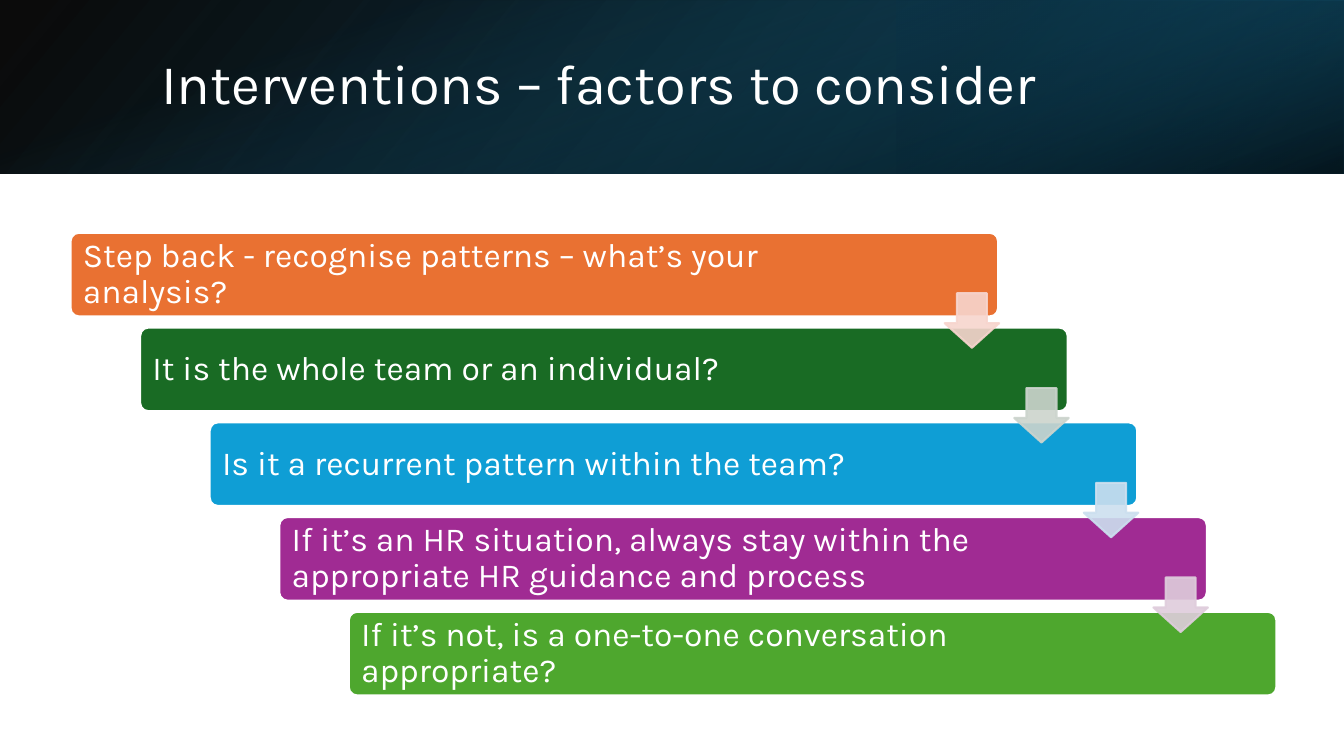
from lxml import etree
from pptx import Presentation
from pptx.dml.color import RGBColor
from pptx.enum.shapes import MSO_SHAPE as Preset
from pptx.enum.text import MSO_ANCHOR as Anchor, PP_ALIGN as Align
from pptx.oxml import parse_xml
from pptx.oxml.ns import nsdecls, qn
from pptx.util import Inches, Pt

# Content
TITLE = "Interventions – factors to consider"
FACTORS = [
    ("Step back - recognise patterns – what’s your analysis?", "orange"),
    ("It is the whole team or an individual?", "green"),
    ("Is it a recurrent pattern within the team?", "blue"),
    ("If it’s an HR situation, always stay within the appropriate HR guidance and process", "purple"),
    ("If it’s not, is a one-to-one conversation appropriate?", "lime"),
]
ARROW_TINTS = ["pale orange", "pale green", "pale blue", "pale purple"]
COLORS = {
    "white": "FFFFFF", "black": "000000",
    "navy": "104862", "deep teal": "0B3041", "teal": "156082",
    "orange": "E97132", "green": "196B24", "blue": "0F9ED5",
    "purple": "A02B93", "lime": "4EA72E",
    "pale orange": "F7D5CE", "pale green": "CCD4CD",
    "pale blue": "CCDFEF", "pale purple": "DFCDDC",
}
FONT = "Karla"

# Header layers: box, rotation, flipped, angle, stops (position, color, opacity)
HEADER_LAYERS = [
    ((0, 0, 13.33, 1.72), 0, True, 140, [(0, "black", 96), (100, "navy", 100)]),
    ((8.89, 0, 4.44, 1.72), 180, True, 320, [(19, "deep teal", 68), (100, "teal", 79)]),
    ((5.8, -5.8, 1.72, 13.33), 90, False, 340, [(23, "teal", 0), (99, "black", 74)]),
]

# Staircase geometry, in inches
BAR_LEFT, BAR_TOP, BAR_WIDTH, BAR_HEIGHT = 0.7, 2.31, 9.2, 0.83
STEP_X, STEP_Y = 0.69, 0.94
ARROW_LEFT, ARROW_TOP, ARROW_SIZE = 9.37, 2.91, 0.54


def color(name):
    return RGBColor.from_string(COLORS[name])


def set_text(frame, text, size=24, name="white", margins=(0.1, 0.05, 0.1, 0.05)):
    frame.word_wrap = True
    frame.vertical_anchor = Anchor.MIDDLE
    (frame.margin_left, frame.margin_top,
     frame.margin_right, frame.margin_bottom) = map(Inches, margins)
    para = frame.paragraphs[0]
    para.alignment = Align.LEFT
    para.line_spacing = 0.9
    span = para.add_run()
    span.text = text
    span.font.name = FONT
    span.font.size = Pt(size)
    span.font.color.rgb = color(name)


def add_box(page, preset, box, fill=None, line=None, adjustments=()):
    shape = page.shapes.add_shape(preset, *map(Inches, box))
    shape.shadow.inherit = False
    for index, value in enumerate(adjustments):
        shape.adjustments[index] = value
    if fill:
        shape.fill.solid()
        shape.fill.fore_color.rgb = color(fill)
    if line:
        shape.line.color.rgb = color(line)
        shape.line.width = Pt(1.5)
    else:
        shape.line.fill.background()
    return shape


def set_gradient(shape, angle, stops):
    stop_xml = "".join(
        f'<a:gs pos="{position * 1000}"><a:srgbClr val="{COLORS[name]}">'
        f'<a:alpha val="{opacity * 1000}"/></a:srgbClr></a:gs>'
        for position, name, opacity in stops)
    gradient = parse_xml(
        f'<a:gradFill {nsdecls("a")} rotWithShape="1"><a:gsLst>{stop_xml}</a:gsLst>'
        f'<a:lin ang="{angle * 60000}" scaled="0"/></a:gradFill>')
    shape._element.spPr.find(qn("a:prstGeom")).addnext(gradient)


def set_opacity(shape, percent):
    for swatch in shape._element.spPr.iter(qn("a:srgbClr")):
        etree.SubElement(swatch, qn("a:alpha")).set("val", str(percent * 1000))


def main():
    deck = Presentation()
    deck.slide_width, deck.slide_height = Inches(13.33), Inches(7.5)
    page = deck.slides.add_slide(deck.slide_layouts[5])
    title = page.shapes.title

    # Header band
    for box, rotation, flipped, angle, stops in HEADER_LAYERS:
        layer = add_box(page, Preset.RECTANGLE, box)
        layer.rotation = rotation
        if flipped:
            layer._element.spPr.find(qn("a:xfrm")).set("flipH", "1")
        set_gradient(layer, angle, stops)

    # Title, raised above the band
    title.left, title.top, title.width, title.height = map(Inches, (1.5, 0.38, 10.98, 0.96))
    set_text(title.text_frame, TITLE, size=40)
    page.shapes._spTree.append(title._element)

    # Staircase of bars
    for step, (text, fill) in enumerate(FACTORS):
        box = (BAR_LEFT + step * STEP_X, BAR_TOP + step * STEP_Y, BAR_WIDTH, BAR_HEIGHT)
        bar = add_box(page, Preset.ROUNDED_RECTANGLE, box, fill, "white", [0.1])
        set_text(bar.text_frame, text, margins=(0.1, 0.1, 1.33, 0.1))

    # Arrows between bars
    for step, tint in enumerate(ARROW_TINTS):
        box = (ARROW_LEFT + step * STEP_X, ARROW_TOP + step * STEP_Y, ARROW_SIZE, ARROW_SIZE)
        arrow = add_box(page, Preset.DOWN_ARROW, box, tint, tint, [0.55, 0.45])
        set_opacity(arrow, 90)

    deck.save("out.pptx")


if __name__ == "__main__":
    main()
